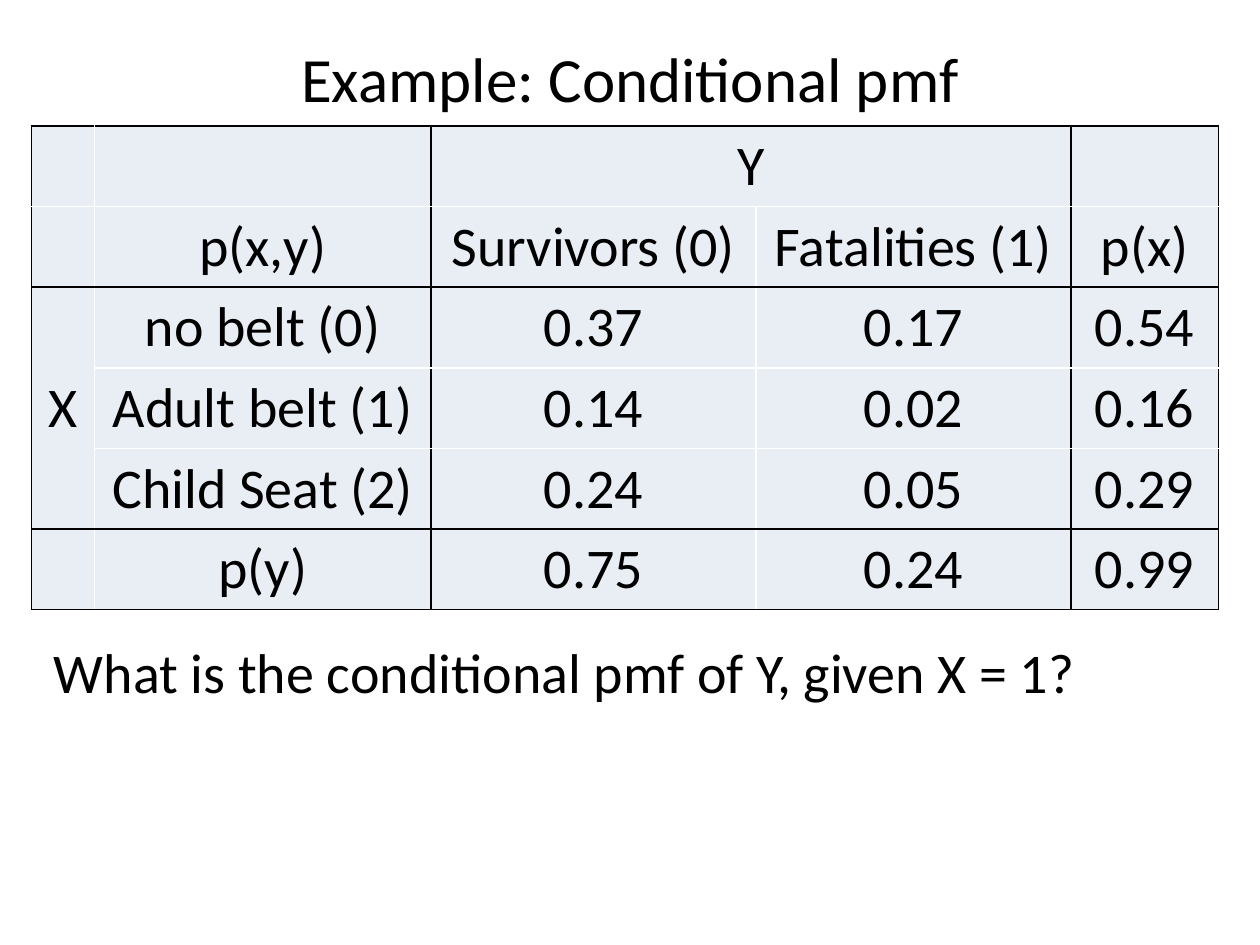
from lxml import etree
from pptx import Presentation
from pptx.dml.color import RGBColor
from pptx.enum.text import MSO_ANCHOR, PP_ALIGN
from pptx.oxml.ns import qn
from pptx.util import Inches, Pt

LEFT, CENTER = PP_ALIGN.LEFT, PP_ALIGN.CENTER
TOP, MIDDLE = MSO_ANCHOR.TOP, MSO_ANCHOR.MIDDLE
BLACK, WHITE, PALE = "000000", "FFFFFF", "E9EDF4"

WIDTHS = [0.5, 2.67, 2.58, 2.5, 1.17]
HEIGHT = 0.64
ROWS = [
    ["", "", "Y", "", ""],
    ["", "p(x,y)", "Survivors (0)", "Fatalities (1)", "p(x)"],
    ["X", "no belt (0)", "0.37", "0.17", "0.54"],
    ["", "Adult belt (1)", "0.14", "0.02", "0.16"],
    ["", "Child Seat (2)", "0.24", "0.05", "0.29"],
    ["", "p(y)", "0.75", "0.24", "0.99"],
]
MERGES = [((0, 2), (0, 3)), ((2, 0), (4, 0))]
DARK_COLS = {0, 2, 4, 5}
DARK_ROWS = {0, 2, 5, 6}


def color(code):
    return RGBColor.from_string(code)


def write(frame, text, size=32, align=CENTER, font="Calibri", ink=BLACK):
    para = frame.paragraphs[0]
    para.alignment = align
    run = para.add_run()
    run.text = text
    run.font.name = font
    run.font.size = Pt(size)
    run.font.bold = False
    run.font.color.rgb = color(ink)


def edge(cell, side, dark):
    props = cell._tc.get_or_add_tcPr()
    line = etree.SubElement(props, qn("a:ln" + side), w=str(Pt(1)))
    fill = etree.SubElement(line, qn("a:solidFill"))
    etree.SubElement(fill, qn("a:srgbClr"), val=BLACK if dark else WHITE)


class Deck:
    def __init__(self, wide, high):
        self.show = Presentation()
        self.show.slide_width = Inches(wide)
        self.show.slide_height = Inches(high)
        self.slide = self.show.slides.add_slide(self.show.slide_layouts[6])

    def text(self, text, left, top, wide, high, anchor=TOP, **style):
        box = self.slide.shapes.add_textbox(
            Inches(left), Inches(top), Inches(wide), Inches(high))
        frame = box.text_frame
        frame.word_wrap = True
        frame.vertical_anchor = anchor
        write(frame, text, **style)

    def table(self, left, top):
        grid = self.slide.shapes.add_table(
            len(ROWS), len(WIDTHS), Inches(left), Inches(top),
            Inches(sum(WIDTHS)), Inches(HEIGHT * len(ROWS))).table
        grid.first_row = grid.horz_banding = False
        for col, wide in zip(grid.columns, WIDTHS):
            col.width = Inches(wide)
        for row in grid.rows:
            row.height = Inches(HEIGHT)
        for start, end in MERGES:
            grid.cell(*start).merge(grid.cell(*end))
        for r, row in enumerate(ROWS):
            for c, text in enumerate(row):
                cell = grid.cell(r, c)
                if not cell.is_spanned:
                    self.cell(cell, r, c, text)

    def cell(self, cell, r, c, text):
        cell.vertical_anchor = MIDDLE
        if text:
            write(cell.text_frame, text)
        edge(cell, "L", c in DARK_COLS)
        edge(cell, "R", c + cell.span_width in DARK_COLS)
        edge(cell, "T", r in DARK_ROWS)
        edge(cell, "B", r + cell.span_height in DARK_ROWS)
        cell.fill.solid()
        cell.fill.fore_color.rgb = color(PALE)


def main():
    deck = Deck(10, 7.5)
    deck.text("Example: Conditional pmf", 0, 0.3, 10, 0.62,
              anchor=MIDDLE, size=36)
    deck.text("What is the conditional pmf of Y, given X = 1?",
              0.33, 5.01, 9.42, 2.24, align=LEFT)
    deck.table(0.25, 1)
    deck.show.save("out.pptx")


if __name__ == "__main__":
    main()
